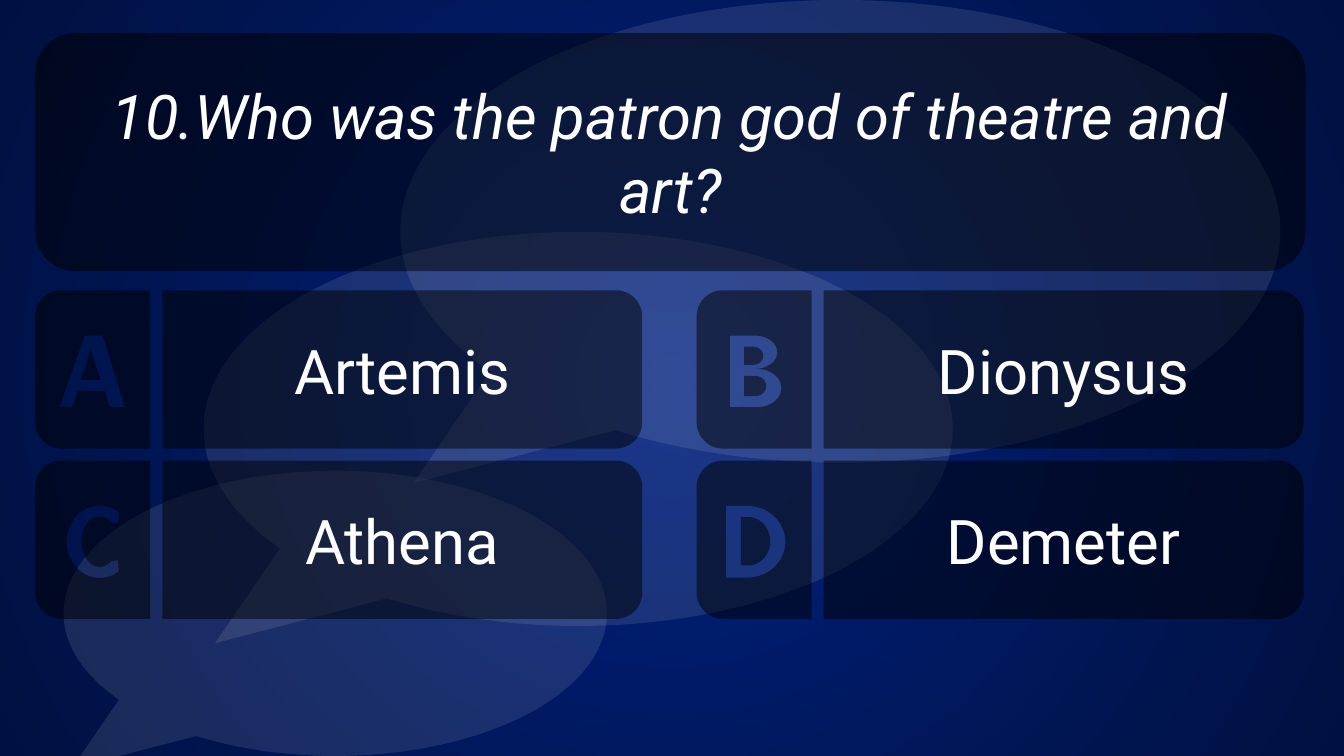
"""Build a quiz slide with one question and four lettered answers."""
import math

from lxml import etree
from pptx import Presentation
from pptx.dml.color import RGBColor
from pptx.enum import shapes, text
from pptx.oxml import ns
from pptx.util import Inches, Pt

WHITE = RGBColor(0xFF, 0xFF, 0xFF)
BLACK = RGBColor(0x00, 0x00, 0x00)
CENTRE_BLUE = RGBColor(0x00, 0x21, 0x7F)
EDGE_BLUE = RGBColor(0x00, 0x10, 0x40)

FONT = "Roboto"
QUESTION = "10.Who was the patron god of theatre and art?"
ANSWERS = {"A": "Artemis", "B": "Dionysus", "C": "Athena", "D": "Demeter"}
QUESTION_BOX = (0.35, 0.33, 12.6, 2.36)
CALLOUTS = [
    (0.63, 4.67, 5.39, 2.83),
    (2.02, 2.3, 7.43, 3.91),
    (3.97, 0, 8.73, 4.59),
]

GRID_LEFT, GRID_TOP = 0.35, 2.88
COLUMN_STEP, ROW_STEP = 6.56, 1.69
TILE_WIDTH, ANSWER_WIDTH, PANEL_HEIGHT = 1.14, 4.76, 1.57
ANSWER_OFFSET = 1.26
CORNER = 0.26
LETTER_TOP, LETTER_BOTTOM = 0.45, 1.16


def arc(centre_x, centre_y, radius_x, radius_y, start, end):
    """Return points on an ellipse; degrees run counterclockwise from the right."""
    steps = 24
    angles = [math.radians(start + (end - start) * i / steps) for i in range(steps + 1)]
    return [(centre_x + radius_x * math.cos(angle), centre_y - radius_y * math.sin(angle))
            for angle in angles]


def bowl(centre_x, top, bottom, right):
    """Return a half ellipse that bulges to the right."""
    return arc(centre_x, (top + bottom) / 2, right - centre_x, (bottom - top) / 2, 90, -90)


def counter(left, centre_x, top, bottom, right):
    """Return a closed outline with a straight left side and a round right side."""
    return [(left, top), *bowl(centre_x, top, bottom, right), (left, bottom)]


def letter_contours():
    """Return the outlines of each letter, measured from its tile's corner."""
    top, bottom = LETTER_TOP, LETTER_BOTTOM
    middle = (top + bottom) / 2
    return {
        "A": [
            [(0.24, bottom), (0.49, top), (0.67, top), (0.89, bottom),
             (0.74, bottom), (0.69, 1), (0.42, 1), (0.37, bottom)],
            [(0.55, 0.59), (0.65, 0.89), (0.45, 0.89)],
        ],
        "B": [
            [(0.33, top), *bowl(0.58, top, 0.78, 0.8),
             *bowl(0.6, 0.78, bottom, 0.84), (0.33, bottom)],
            counter(0.47, 0.56, 0.56, 0.74, 0.66),
            counter(0.47, 0.58, 0.85, 1.05, 0.69),
        ],
        "C": [
            [*arc(0.64, middle, 0.33, 0.36, 55, 305), (0.82, 0.99),
             *arc(0.64, middle, 0.18, 0.25, 310, 50), (0.82, 0.62)],
        ],
        "D": [
            counter(0.29, 0.51, top, bottom, 0.88),
            counter(0.44, 0.51, 0.56, 1.04, 0.73),
        ],
    }


def rounded_right(width):
    """Return a panel outline whose two right corners are round."""
    inner_x, inner_y = width - CORNER, PANEL_HEIGHT - CORNER
    return [(0, 0), *arc(inner_x, CORNER, CORNER, CORNER, 90, 0),
            *arc(inner_x, inner_y, CORNER, CORNER, 0, -90), (0, PANEL_HEIGHT)]


def mirrored(points, width):
    """Return an outline flipped from left to right."""
    return [(width - x, y) for x, y in points]


def paint(shape, color, opacity):
    """Give a shape a translucent fill without line or shadow."""
    shape.shadow.inherit = False
    shape.fill.solid()
    shape.fill.fore_color.rgb = color
    shape.line.fill.background()
    color_element = shape._element.spPr.find(".//" + ns.qn("a:srgbClr"))
    etree.SubElement(color_element, ns.qn("a:alpha"), val=str(opacity * 1000))


def write(shape, words, italic=False):
    """Put one centred white line of text into a shape."""
    frame = shape.text_frame
    frame.word_wrap = True
    frame.auto_size = text.MSO_AUTO_SIZE.NONE
    frame.vertical_anchor = text.MSO_ANCHOR.MIDDLE
    paragraph = frame.paragraphs[0]
    paragraph.alignment = text.PP_ALIGN.CENTER
    run = paragraph.add_run()
    run.text = words
    run.font.name = FONT
    run.font.size = Pt(44)
    run.font.italic = italic
    run.font.color.rgb = WHITE


def set_background(slide):
    """Fill the background with a gradient that darkens from the centre."""
    fill = slide.background.fill
    fill.gradient()
    for stop, color in zip(fill.gradient_stops, (CENTRE_BLUE, EDGE_BLUE)):
        stop.color.rgb = color
    gradient = slide._element.find(".//" + ns.qn("a:gradFill"))
    linear = gradient.find(ns.qn("a:lin"))
    radial = etree.Element(ns.qn("a:path"), path="circle")
    sides = dict.fromkeys("ltrb", "50000")
    etree.SubElement(radial, ns.qn("a:fillToRect"), **sides)
    gradient.replace(linear, radial)


def add_callouts(slide):
    """Add the group of pale speech bubbles."""
    group = slide.shapes.add_group_shape()
    for box in CALLOUTS:
        bubble = group.shapes.add_shape(
            shapes.MSO_SHAPE.OVAL_CALLOUT, *map(Inches, box))
        bubble.adjustments[0] = -0.485
        bubble.adjustments[1] = 0.544
        paint(bubble, WHITE, 10)


def add_panel(slide, left, top, contours):
    """Add a dark panel; contours after the first are cut out of it."""
    outlines = [[(Inches(x), Inches(y)) for x, y in contour] for contour in contours]
    builder = slide.shapes.build_freeform(*outlines[0][0], scale=1.0)
    builder.add_line_segments(outlines[0][1:], close=True)
    for outline in outlines[1:]:
        builder.move_to(*outline[0])
        builder.add_line_segments(outline[1:], close=True)
    panel = builder.convert_to_shape(Inches(left), Inches(top))
    paint(panel, BLACK, 50)
    return panel


def add_answers(slide):
    """Add the two by two grid of letter tiles and answers."""
    letters = letter_contours()
    tile = mirrored(rounded_right(TILE_WIDTH), TILE_WIDTH)
    for index, (letter, answer) in enumerate(ANSWERS.items()):
        row, column = divmod(index, 2)
        left = GRID_LEFT + column * COLUMN_STEP
        top = GRID_TOP + row * ROW_STEP
        panel = add_panel(slide, left + ANSWER_OFFSET, top, [rounded_right(ANSWER_WIDTH)])
        write(panel, answer)
        add_panel(slide, left, top, [tile, *letters[letter]])


def add_question(slide):
    """Add the question panel and lay the title over it."""
    box = [Inches(length) for length in QUESTION_BOX]
    panel = slide.shapes.add_shape(shapes.MSO_SHAPE.ROUNDED_RECTANGLE, *box)
    paint(panel, BLACK, 50)
    title = slide.shapes.title
    title.left, title.top, title.width, title.height = box
    title.text_frame.margin_left = title.text_frame.margin_right = Inches(0.25)
    write(title, QUESTION, italic=True)
    panel._element.addnext(title._element)


def main():
    """Build and save the presentation."""
    presentation = Presentation()
    presentation.slide_width = Inches(13.33)
    presentation.slide_height = Inches(7.5)
    slide = presentation.slides.add_slide(presentation.slide_layouts[5])
    set_background(slide)
    add_callouts(slide)
    add_answers(slide)
    add_question(slide)
    presentation.save("out.pptx")


if __name__ == "__main__":
    main()
